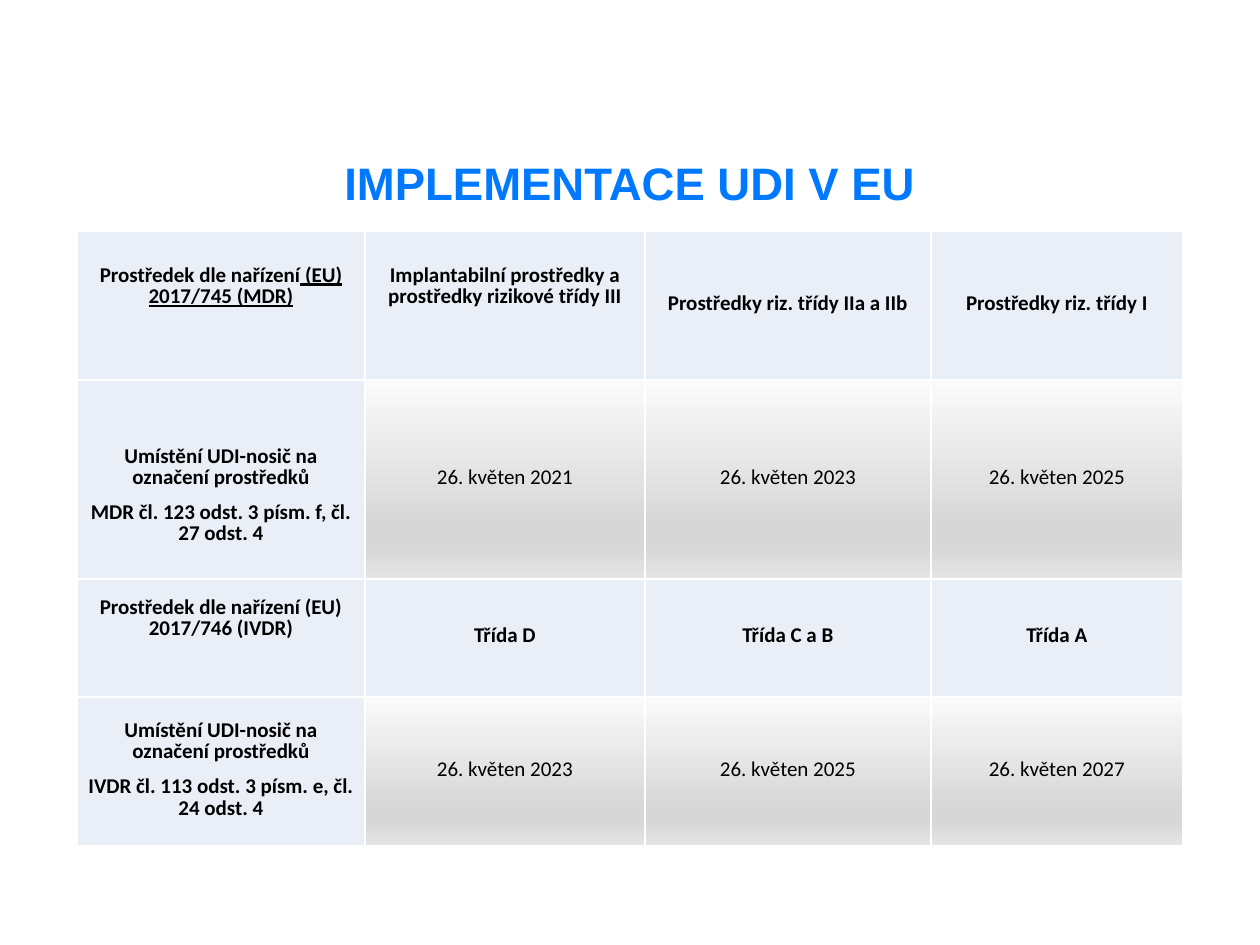
from dataclasses import dataclass

from lxml.etree import SubElement
from pptx import Presentation
from pptx.dml.color import RGBColor
from pptx.enum.text import MSO_ANCHOR, PP_ALIGN
from pptx.oxml.ns import qn
from pptx.util import Pt

PX = 914400 // 126


@dataclass(frozen=True)
class Theme:
    title_font: str = "Arial"
    table_font: str = "Calibri"
    title_size: int = 26
    table_size: int = 12
    title_color: str = "0079FF"
    text_color: str = "000000"
    label_fill: str = "EAEFF7"
    border_color: str = "FFFFFF"
    date_gradient: tuple = ((0, "FAFAFA"), (74, "D7D7D7"), (83, "D7D7D7"), (100, "E4E4E4"))


THEME = Theme()
COLUMN_WIDTHS = (288, 280, 286, 252)
ROW_HEIGHTS = (149, 199, 118, 149)
SIDE_MARGIN = 11
LINE_SPACING = Pt(12.1)
SPACE_AFTER = Pt(8)
# One text line with its spacing, kept free above or below the text of some cells
RESERVED_LINE = LINE_SPACING + SPACE_AFTER

# Each cell is a list of paragraphs, each paragraph a list of runs
ROWS = (
    ([["Prostředek dle nařízení", " (EU) 2017/745 (MDR)"]],
     [["Implantabilní prostředky a prostředky rizikové třídy III"]],
     [["Prostředky riz. třídy IIa a IIb"]],
     [["Prostředky riz. třídy I"]]),
    ([["Umístění UDI-nosič na označení prostředků"],
      ["MDR čl. 123 odst. 3 písm. f, čl. 27 odst. 4"]],
     [["26. květen 2021"]], [["26. květen 2023"]], [["26. květen 2025"]]),
    ([["Prostředek dle nařízení (EU) 2017/746 (IVDR)"]],
     [["Třída D"]], [["Třída C a B"]], [["Třída A"]]),
    ([["Umístění UDI-nosič na označení prostředků"],
      ["IVDR čl. 113 odst. 3 písm. e, čl. 24 odst. 4"]],
     [["26. květen 2023"]], [["26. květen 2025"]], [["26. květen 2027"]]),
)
LINE_BELOW = {(0, 0), (0, 1), (2, 0)}
LINE_ABOVE = {(1, 0)}


def style_font(font, name, size, color, bold):
    font.name = name
    font.size = Pt(size)
    font.bold = bold
    font.color.rgb = RGBColor.from_string(color)


def add_title(slide, text):
    title = slide.shapes.title
    title.left, title.top, title.width, title.height = (
        value * PX for value in (87, 151, 1086, 69))
    title.text_frame.text = text
    title.text_frame.word_wrap = True
    title.text_frame.vertical_anchor = MSO_ANCHOR.MIDDLE
    paragraph = title.text_frame.paragraphs[0]
    paragraph.alignment = PP_ALIGN.CENTER
    paragraph.line_spacing = 0.9
    style_font(paragraph.font, THEME.title_font, THEME.title_size, THEME.title_color, True)


def add_solid_fill(parent, color):
    SubElement(SubElement(parent, qn("a:solidFill")), qn("a:srgbClr"), val=color)


def set_borders(cell):
    properties = cell._tc.get_or_add_tcPr()
    for side in ("lnL", "lnR", "lnT", "lnB"):
        line = SubElement(properties, qn(f"a:{side}"), w=str(Pt(1)))
        add_solid_fill(line, THEME.border_color)


def set_gradient(cell):
    """Fill the cell from top to bottom with the theme's gradient stops."""
    gradient = SubElement(cell._tc.get_or_add_tcPr(), qn("a:gradFill"), rotWithShape="1")
    stops = SubElement(gradient, qn("a:gsLst"))
    for percent, color in THEME.date_gradient:
        stop = SubElement(stops, qn("a:gs"), pos=str(percent * 1000))
        SubElement(stop, qn("a:srgbClr"), val=color)
    SubElement(gradient, qn("a:lin"), ang="5400000", scaled="0")


def fill_text(cell, paragraphs, bold):
    frame = cell.text_frame
    for index, runs in enumerate(paragraphs):
        paragraph = frame.add_paragraph() if index else frame.paragraphs[0]
        paragraph.alignment = PP_ALIGN.CENTER
        paragraph.line_spacing = LINE_SPACING
        paragraph.space_after = SPACE_AFTER
        style_font(paragraph.font, THEME.table_font, THEME.table_size, THEME.text_color, bold)
        for run_index, text in enumerate(runs):
            run = paragraph.add_run()
            run.text = text
            if run_index:
                run.font.underline = True


def format_cell(cell, position, paragraphs):
    row, column = position
    is_date = row % 2 == 1 and column > 0
    cell.vertical_anchor = MSO_ANCHOR.MIDDLE
    cell.margin_left = cell.margin_right = SIDE_MARGIN * PX
    cell.margin_top = RESERVED_LINE if position in LINE_ABOVE else 0
    cell.margin_bottom = RESERVED_LINE if position in LINE_BELOW else 0
    set_borders(cell)
    if is_date:
        set_gradient(cell)
    else:
        cell.fill.solid()
        cell.fill.fore_color.rgb = RGBColor.from_string(THEME.label_fill)
    fill_text(cell, paragraphs, not is_date)


def add_schedule_table(slide):
    table = slide.shapes.add_table(
        len(ROW_HEIGHTS), len(COLUMN_WIDTHS), 77 * PX, 231 * PX,
        sum(COLUMN_WIDTHS) * PX, sum(ROW_HEIGHTS) * PX).table
    table.first_row = table.horz_banding = False
    for column, width in zip(table.columns, COLUMN_WIDTHS):
        column.width = width * PX
    for row, height in zip(table.rows, ROW_HEIGHTS):
        row.height = height * PX
    for row_index, row in enumerate(ROWS):
        for column_index, paragraphs in enumerate(row):
            position = (row_index, column_index)
            format_cell(table.cell(*position), position, paragraphs)


def main():
    presentation = Presentation()
    presentation.slide_width = 1260 * PX
    presentation.slide_height = 945 * PX
    slide = presentation.slides.add_slide(presentation.slide_layouts[5])
    add_title(slide, "IMPLEMENTACE UDI V EU")
    add_schedule_table(slide)
    presentation.save("out.pptx")


if __name__ == "__main__":
    main()
